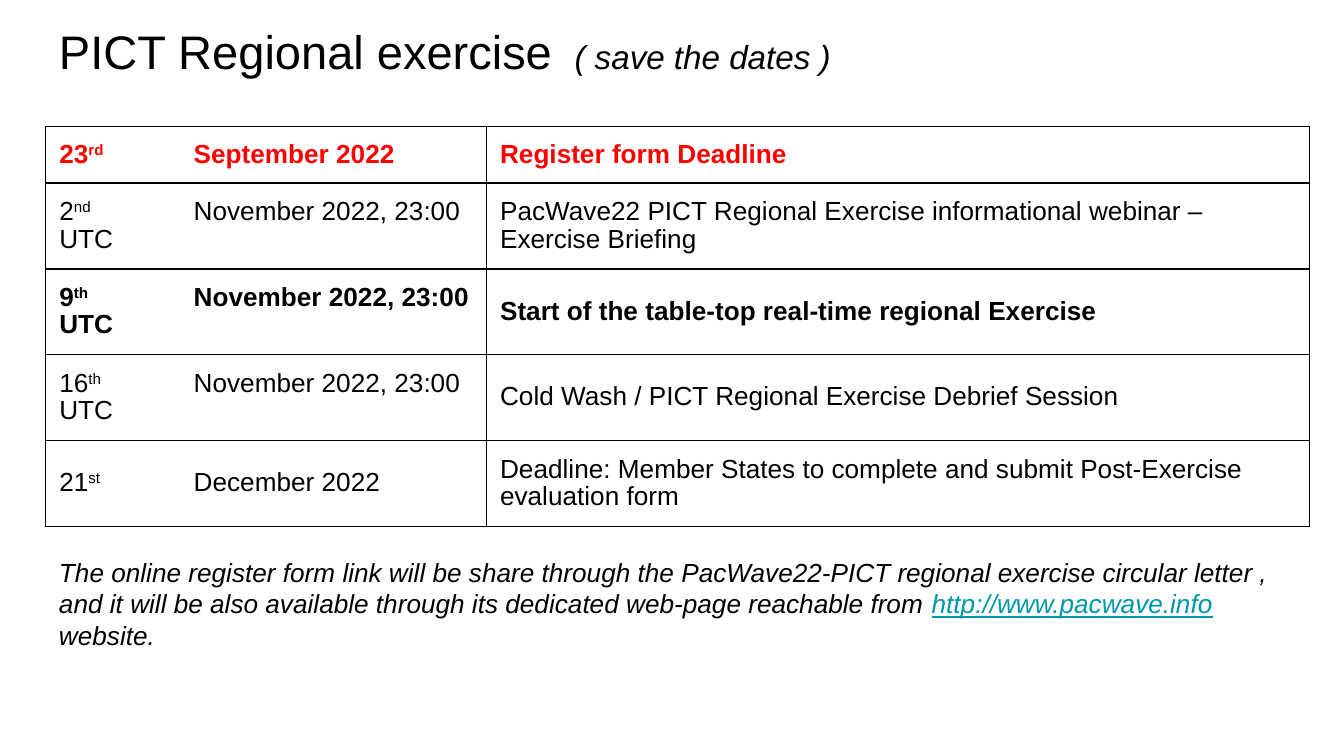
"""Build the regional exercise slide with its table of dates."""

from dataclasses import dataclass

from lxml.etree import SubElement
from pptx import Presentation
from pptx.dml.color import RGBColor
from pptx.enum.text import MSO_ANCHOR
from pptx.oxml.ns import qn
from pptx.util import Inches, Length, Pt

SLIDE_WIDTH = Inches(10)
SLIDE_HEIGHT = Length(SLIDE_WIDTH * 9 // 16)
LEFT = 3.41
BOX_WIDTH = 93.18
COLUMN_WIDTHS = (32.8, 61.2)
ROW_HEIGHT = Inches(0.26)
MONTH_TAB = Inches(1)
CELL_SPACING = 0.94
BLACK, RED, TEAL = "000000", "FF0000", "0097A7"
MARGINS = {f"margin_{side}": Inches(0.1) for side in ("left", "top", "right", "bottom")}


@dataclass(frozen=True)
class Span:
    """A stretch of text in one style."""

    text: str
    size: float = 14
    color: str = BLACK
    bold: bool = False
    italic: bool = False
    underline: bool = False
    raised: bool = False


@dataclass(frozen=True)
class Milestone:
    """A date of the exercise and what happens on it."""

    day: str
    ordinal: str
    month: str
    event: str
    color: str = BLACK
    bold: bool = False


MILESTONES = (
    Milestone("23", "rd", "September 2022", "Register form Deadline", RED, True),
    Milestone("2", "nd", "November 2022, 23:00 UTC",
              "PacWave22 PICT Regional Exercise informational webinar – Exercise Briefing"),
    Milestone("9", "th", "November 2022, 23:00 UTC",
              "Start of the table-top real-time regional Exercise", bold=True),
    Milestone("16", "th", "November 2022, 23:00 UTC",
              "Cold Wash / PICT Regional Exercise Debrief Session"),
    Milestone("21", "st", "December 2022",
              "Deadline: Member States to complete and submit Post-Exercise evaluation form"),
)
HEADING = (
    Span("PICT Regional exercise ", 25.2),
    Span(" ( save the dates )", 17.8, italic=True),
)
REGISTRATION = (
    Span("The online register form link will be share through the PacWave22-PICT regional "
         "exercise circular letter , and it will be also available through its dedicated "
         "web-page reachable from ", italic=True),
    Span("http://www.pacwave.info", color=TEAL, italic=True, underline=True),
    Span(" website.", italic=True),
)


def across(percent: float) -> Length:
    """Turn a percentage of the slide width into a length."""
    return Length(round(SLIDE_WIDTH * percent / 100))


def down(percent: float) -> Length:
    """Turn a percentage of the slide height into a length."""
    return Length(round(SLIDE_HEIGHT * percent / 100))


def rgb(color: str) -> RGBColor:
    """Turn a hex string into a colour."""
    return RGBColor.from_string(color)


def apply_format(target, values: dict) -> None:
    """Set every attribute named in the format values."""
    for name, value in values.items():
        setattr(target, name, value)


def write_spans(paragraph, spans: tuple[Span, ...]) -> None:
    """Add the spans to a paragraph as formatted runs."""
    for span in spans:
        run = paragraph.add_run()
        run.text = span.text
        apply_format(run.font, {
            "name": "Arial", "size": Pt(span.size), "bold": span.bold,
            "italic": span.italic, "underline": span.underline,
        })
        run.font.color.rgb = rgb(span.color)
        if span.raised:
            run._r.get_or_add_rPr().set("baseline", "30000")


def draw_text(slide, top: float, height: float, spans: tuple[Span, ...],
              anchor: MSO_ANCHOR) -> None:
    """Draw a text block at percentages of the slide height."""
    block = slide.shapes.add_textbox(across(LEFT), down(top), across(BOX_WIDTH), down(height))
    frame = block.text_frame
    apply_format(frame, {**MARGINS, "word_wrap": True, "vertical_anchor": anchor})
    write_spans(frame.paragraphs[0], spans)


def set_month_tab(paragraph) -> None:
    """Align the months at one tab stop."""
    stops = SubElement(paragraph._p.get_or_add_pPr(), qn("a:tabLst"))
    SubElement(stops, qn("a:tab"), pos=str(MONTH_TAB), algn="l")


def draw_borders(cell) -> None:
    """Outline a cell with thin black lines and leave it unfilled."""
    properties = cell._tc.get_or_add_tcPr()
    for side in ("lnL", "lnR", "lnT", "lnB"):
        border = SubElement(properties, qn(f"a:{side}"), w=str(Pt(0.75)))
        fill = SubElement(border, qn("a:solidFill"))
        SubElement(fill, qn("a:srgbClr"), val=BLACK)
    cell.fill.background()


def draw_schedule(slide, top: float, milestones: tuple[Milestone, ...]) -> None:
    """Draw the milestones as a table of dates and events."""
    schedule = slide.shapes.add_table(
        len(milestones), len(COLUMN_WIDTHS), across(LEFT), down(top),
        across(sum(COLUMN_WIDTHS)), Length(ROW_HEIGHT * len(milestones))).table
    apply_format(schedule, {"first_row": False, "horz_banding": False})
    for column, width in zip(schedule.columns, COLUMN_WIDTHS):
        column.width = across(width)
    for row, milestone in zip(schedule.rows, milestones):
        row.height = ROW_HEIGHT
        style = {"color": milestone.color, "bold": milestone.bold}
        date = (
            Span(milestone.day, **style),
            Span(milestone.ordinal, raised=True, **style),
            Span(f" \t{milestone.month}", **style),
        )
        event = (Span(milestone.event, **style),)
        for cell, spans in zip(row.cells, (date, event)):
            apply_format(cell, {**MARGINS, "vertical_anchor": MSO_ANCHOR.MIDDLE})
            paragraph = cell.text_frame.paragraphs[0]
            paragraph.line_spacing = CELL_SPACING
            write_spans(paragraph, spans)
            draw_borders(cell)
        set_month_tab(row.cells[0].text_frame.paragraphs[0])


def main() -> None:
    """Build and save the slide."""
    deck = Presentation()
    apply_format(deck, {"slide_width": SLIDE_WIDTH, "slide_height": SLIDE_HEIGHT})
    slide = deck.slides.add_slide(deck.slide_layouts[6])
    draw_text(slide, 1.07, 11.2, HEADING, MSO_ANCHOR.BOTTOM)
    draw_schedule(slide, 16.75, MILESTONES)
    draw_text(slide, 71.82, 16.18, REGISTRATION, MSO_ANCHOR.TOP)
    deck.save("out.pptx")


if __name__ == "__main__":
    main()
